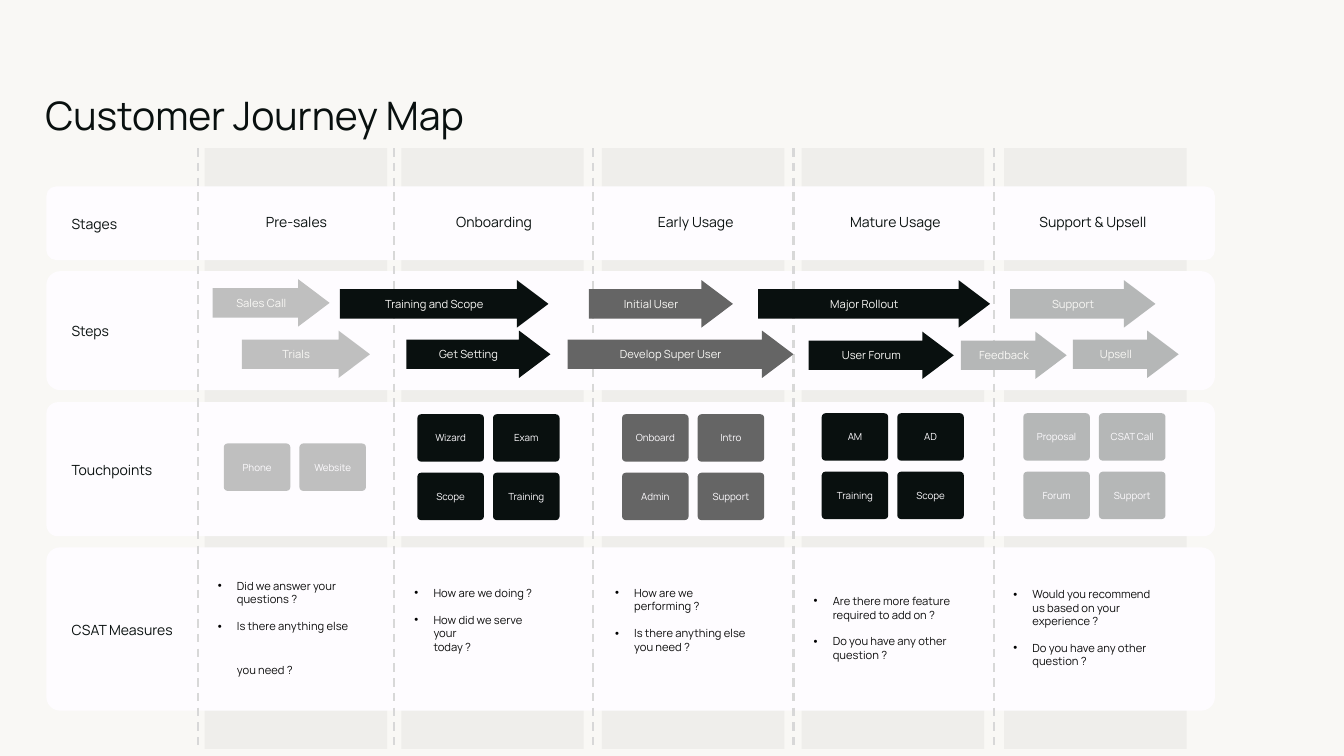
"""Build the Customer Journey Map slide."""
from lxml import etree
from pptx import Presentation
from pptx.dml.color import RGBColor
from pptx.enum.dml import MSO_LINE
from pptx.enum.shapes import MSO_CONNECTOR, MSO_SHAPE
from pptx.enum.text import MSO_ANCHOR, MSO_AUTO_SIZE, PP_ALIGN
from pptx.oxml.ns import qn
from pptx.util import Inches, Pt

BACKGROUND, PANEL, INK, BULLET_TEXT = "F9F8F5", "FEFCFF", "09100F", "0C0C0C"
PALE, SILVER, GREY, BAND, DIVIDER = "BFBFBF", "B5B7B7", "656565", "7F7F7F", "D8D8D8"


def add_block(kind, box, color, adjustments=()):
    """Add a borderless shape, or a text box when kind is None."""
    box = [Inches(length) for length in box]
    if kind is None:
        return slide.shapes.add_textbox(*box)
    shape = slide.shapes.add_shape(kind, *box)
    shape.shadow.inherit = False
    shape.fill.solid()
    shape.fill.fore_color.rgb = RGBColor.from_string(color)
    shape.line.fill.background()
    for index, value in enumerate(adjustments):
        shape.adjustments[index] = value
    return shape


def write(shape, text, size, color, align=PP_ALIGN.LEFT, anchor=MSO_ANCHOR.MIDDLE, insets=(0, 0)):
    """Fill a shape with text and format every run."""
    frame = shape.text_frame
    frame.text = text
    frame.word_wrap = True
    frame.auto_size = MSO_AUTO_SIZE.NONE
    frame.vertical_anchor = anchor
    frame.margin_left = frame.margin_right = Inches(insets[0])
    frame.margin_top = frame.margin_bottom = Inches(insets[1])
    for paragraph in frame.paragraphs:
        paragraph.alignment = align
        for run in paragraph.runs:
            run.font.name = "Manrope"
            run.font.size = Pt(size)
            run.font.color.rgb = RGBColor.from_string(color)


presentation = Presentation()
presentation.slide_width, presentation.slide_height = Inches(13.33), Inches(7.5)
slide = presentation.slides.add_slide(presentation.slide_layouts[5])
slide.background.fill.solid()
slide.background.fill.fore_color.rgb = RGBColor.from_string(BACKGROUND)

title = slide.shapes.title
title.left, title.top, title.width, title.height = [Inches(n) for n in (0.45, 0.91, 9.23, 0.51)]
write(title, "Customer Journey Map", 28, INK, anchor=MSO_ANCHOR.TOP)

for left in (2.03, 3.98, 5.97, 7.95, 9.96):
    band = add_block(MSO_SHAPE.RECTANGLE, (left, 1.47, 1.81, 5.96), BAND)
    band_color = band.fill._xPr.find(".//" + qn("a:srgbClr"))
    etree.SubElement(band_color, qn("a:alpha"), val="8000")

rows = [
    ("Stages", 1.85, 0.73, 0.133),
    ("Steps", 2.69, 1.18, 0.116),
    ("Touchpoints", 3.99, 1.33, 0.085),
    ("CSAT Measures", 5.43, 1.62, 0.084),
]
for name, top, height, corner in rows:
    add_block(MSO_SHAPE.ROUNDED_RECTANGLE, (0.46, top, 11.59, height), PANEL, [corner])
    label = add_block(None, (0.71, top + height / 2 - 0.08, 1.2, 0.17), None)
    write(label, name, 10, INK)

for x in (1.96, 3.91, 5.88, 7.87, 9.86):
    divider = slide.shapes.add_connector(
        MSO_CONNECTOR.STRAIGHT, Inches(x), Inches(1.47), Inches(x), Inches(7.44))
    divider.line.color.rgb = RGBColor.from_string(DIVIDER)
    divider.line.width = Pt(1.5)
    divider.line.dash_style = MSO_LINE.DASH
    etree.SubElement(divider._element.spPr, qn("a:effectLst"))

stages = [
    ("Pre-sales", 2.94), ("Onboarding", 4.9), ("Early Usage", 6.9),
    ("Mature Usage", 8.88), ("Support & Upsell", 10.84),
]
for name, center in stages:
    label = add_block(None, (center - 0.7, 2.07, 1.4, 0.27), None)
    write(label, name, 10, INK, PP_ALIGN.CENTER, MSO_ANCHOR.TOP, (0.1, 0.05))

steps = [
    ("Sales Call", 2.11, 2.77, 1.16, PALE),
    ("Trials", 2.4, 3.28, 1.27, PALE),
    ("Training and Scope", 3.37, 2.78, 2.07, INK),
    ("Get Setting", 4.03, 3.28, 1.43, INK),
    ("Initial User", 5.84, 2.78, 1.43, GREY),
    ("Develop Super User", 5.63, 3.28, 2.24, GREY),
    ("Major Rollout", 7.52, 2.78, 2.3, INK),
    ("User Forum", 8.02, 3.29, 1.44, INK),
    ("Support", 10.02, 2.78, 1.44, SILVER),
    ("Feedback", 9.53, 3.29, 1.05, SILVER),
    ("Upsell", 10.64, 3.28, 1.05, SILVER),
]
for name, left, top, width, color in steps:
    arrow = add_block(MSO_SHAPE.RIGHT_ARROW, (left, top, width, 0.47), color, [0.619, 0.664])
    write(arrow, name, 8, BACKGROUND, PP_ALIGN.CENTER, insets=(0.1, 0.05))

touchpoints = [
    (2.22, 4.4, PALE, ["Phone", "Website"]),
    (4.14, 4.11, INK, ["Wizard", "Exam", "Scope", "Training"]),
    (6.17, 4.11, GREY, ["Onboard", "Intro", "Admin", "Support"]),
    (8.15, 4.1, INK, ["AM", "AD", "Training", "Scope"]),
    (10.15, 4.1, SILVER, ["Proposal", "CSAT Call", "Forum", "Support"]),
]
for left, top, color, names in touchpoints:
    for index, name in enumerate(names):
        row, column = divmod(index, 2)
        box = (left + column * 0.75, top + row * 0.58, 0.66, 0.47)
        card = add_block(MSO_SHAPE.ROUNDED_RECTANGLE, box, color, [0.079])
        write(card, name, 7, PANEL, PP_ALIGN.CENTER)

measures = [
    (2.16, 1.31, 0.76, "Did we answer your questions ?", "Is there anything else \vyou need ?"),
    (4.11, 1.31, 0.6, "How are we doing ?", "How did we serve your \vtoday ?"),
    (6.1, 1.31, 0.6, "How are we performing ?", "Is there anything else you need ?"),
    (8.07, 1.43, 0.76, "Are there more feature required to add on ?",
     "Do you have any other question ?"),
    (10.05, 1.44, 0.76, "Would you recommend us based on your experience ?",
     "Do you have any other question ?"),
]
for left, width, height, *questions in measures:
    measure = add_block(None, (left, 5.85, width, height), None)
    write(measure, "\n".join(questions), 8, BULLET_TEXT)
    measure.text_frame.paragraphs[1].space_before = Pt(9.6)
    for paragraph in measure.text_frame.paragraphs:
        properties = paragraph._p.get_or_add_pPr()
        properties.set("marL", str(Inches(0.19)))
        properties.set("indent", str(-Inches(0.19)))
        bullet_color = etree.SubElement(properties, qn("a:buClr"))
        etree.SubElement(bullet_color, qn("a:srgbClr"), val="000000")
        etree.SubElement(properties, qn("a:buFont"), typeface="Arial")
        etree.SubElement(properties, qn("a:buChar"), char="•")

presentation.save("out.pptx")
